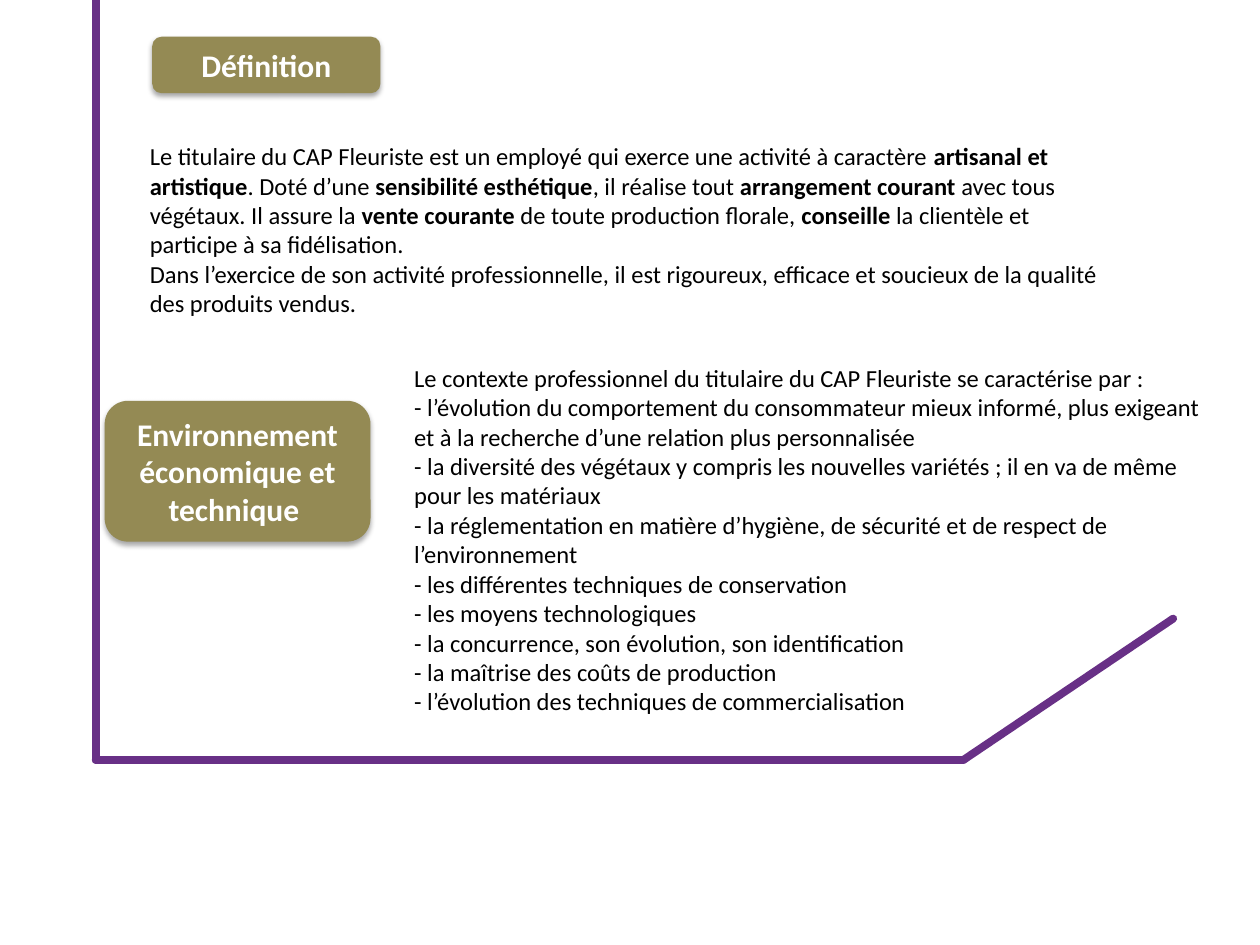
from itertools import pairwise

from lxml import etree
from pptx import Presentation
from pptx.dml.color import RGBColor
from pptx.enum import shapes, text
from pptx.oxml import parse_xml
from pptx.oxml.ns import nsdecls, qn
from pptx.util import Cm, Pt

FONT = "Calibri"
PURPLE, OLIVE, WHITE, BLACK = "683086", "948A54", "FFFFFF", "000000"

FRAME_POINTS = [(1.93, 0), (1.93, 15.32), (19.42, 15.32), (23.65, 12.47)]

# Each paragraph is a list of runs: plain and bold runs alternate, plain first.
DEFINITION = [
    [
        "Le titulaire du CAP Fleuriste est un employé qui exerce une activité à caractère ",
        "artisanal et artistique",
        ". Doté d’une ",
        "sensibilité esthétique",
        ", il réalise tout ",
        "arrangement courant",
        " avec tous végétaux. Il assure la ",
        "vente courante",
        " de toute production florale, ",
        "conseille",
        " la clientèle et participe à sa fidélisation.",
    ],
    [
        "Dans l’exercice de son activité professionnelle, il est rigoureux, efficace "
        "et soucieux de la qualité des produits vendus."
    ],
]
CONTEXT = [
    ["Le contexte professionnel du titulaire du CAP Fleuriste se caractérise par :"],
    ["- l’évolution du comportement du consommateur mieux informé, plus exigeant "
     "et à la recherche d’une relation plus personnalisée"],
    ["- la diversité des végétaux y compris les nouvelles variétés ; "
     "il en va de même pour les matériaux"],
    ["- la réglementation en matière d’hygiène, de sécurité et de respect de l’environnement"],
    ["- les différentes techniques de conservation"],
    ["- les moyens technologiques"],
    ["- la concurrence, son évolution, son identification"],
    ["- la maîtrise des coûts de production"],
    ["- l’évolution des techniques de commercialisation"],
]


def color(value):
    return RGBColor.from_string(value)


def add_run(paragraph, words, size, font_color, bold=False):
    run = paragraph.add_run()
    run.text = words
    run.font.name = FONT
    run.font.size = Pt(size)
    run.font.bold = bold
    run.font.color.rgb = color(font_color)


def add_soft_shadow(shape):
    shape.shadow.inherit = False
    effects = shape._element.spPr.find(qn("a:effectLst"))
    effects.append(parse_xml(
        f'<a:outerShdw {nsdecls("a")} blurRad="{Pt(3.1)}" dist="{Pt(1.8)}" '
        'dir="5400000" rotWithShape="0">'
        f'<a:srgbClr val="{BLACK}"><a:alpha val="35000"/></a:srgbClr></a:outerShdw>'
    ))


def add_frame(slide, points):
    """Draw the purple border as a chain of round-ended lines."""
    for start, end in pairwise(points):
        line = slide.shapes.add_connector(
            shapes.MSO_CONNECTOR.STRAIGHT, *map(Cm, start + end))
        line.line.color.rgb = color(PURPLE)
        line.line.width = Pt(4.5)
        outline = line.line._get_or_add_ln()
        outline.set("cap", "rnd")
        etree.SubElement(outline, qn("a:round"))
        etree.SubElement(line._element.spPr, qn("a:effectLst"))


def add_label(slide, box, words):
    label = slide.shapes.add_shape(
        shapes.MSO_SHAPE.ROUNDED_RECTANGLE, *map(Cm, box))
    label.fill.solid()
    label.fill.fore_color.rgb = color(OLIVE)
    label.line.fill.background()
    add_soft_shadow(label)
    frame = label.text_frame
    frame.word_wrap = True
    frame.vertical_anchor = text.MSO_ANCHOR.MIDDLE
    paragraph = frame.paragraphs[0]
    paragraph.alignment = text.PP_ALIGN.CENTER
    add_run(paragraph, words, 18, WHITE, bold=True)


def add_body(slide, box, paragraphs):
    frame = slide.shapes.add_textbox(*map(Cm, box)).text_frame
    frame.word_wrap = True
    for index, runs in enumerate(paragraphs):
        paragraph = frame.add_paragraph() if index else frame.paragraphs[0]
        for position, words in enumerate(runs):
            add_run(paragraph, words, 14, BLACK, bold=position % 2 == 1)


def main():
    presentation = Presentation()
    presentation.slide_width, presentation.slide_height = Cm(25.4), Cm(19.05)
    slide = presentation.slides.add_slide(presentation.slide_layouts[6])
    add_frame(slide, FRAME_POINTS)
    add_label(slide, (3.07, 0.74, 4.6, 1.14), "Définition")
    add_body(slide, (2.77, 2.72, 19.81, 3.84), DEFINITION)
    add_label(slide, (2.11, 8.08, 5.36, 2.84), "Environnement économique et technique ")
    add_body(slide, (8.1, 7.19, 16.61, 7.44), CONTEXT)
    presentation.save("out.pptx")


if __name__ == "__main__":
    main()
